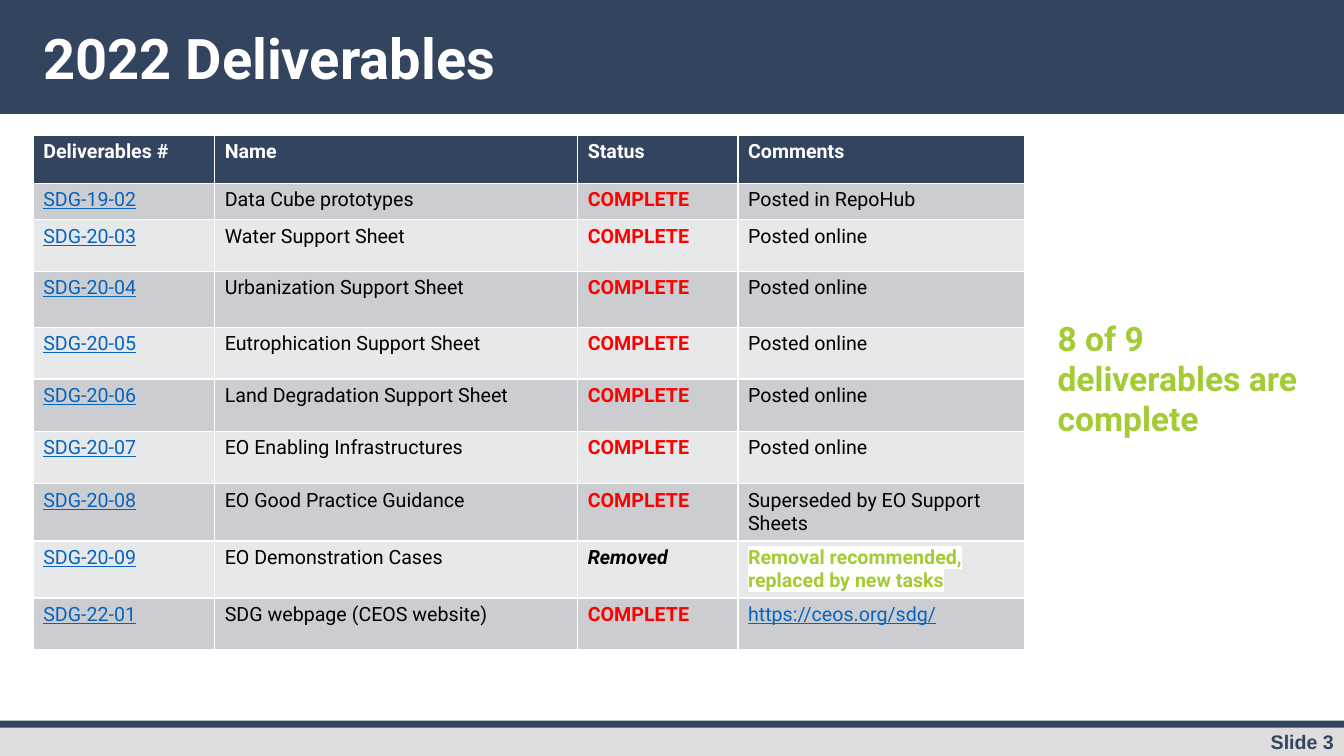
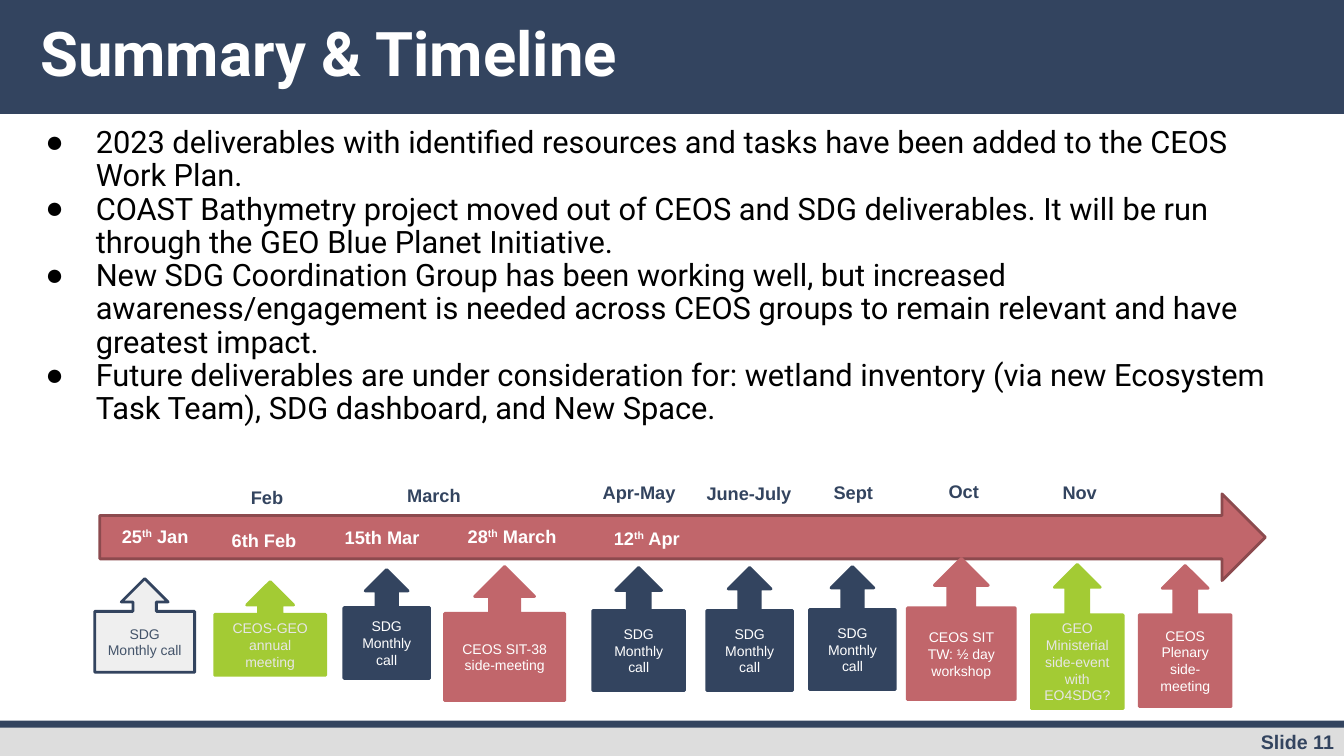
from typing import NamedTuple

from lxml.etree import SubElement
from pptx import Presentation
from pptx.dml.color import RGBColor
from pptx.enum.shapes import MSO_SHAPE as Preset
from pptx.enum.text import MSO_ANCHOR as Anchor
from pptx.enum.text import MSO_AUTO_SIZE as AutoSize
from pptx.enum.text import PP_ALIGN as Align
from pptx.oxml import parse_xml
from pptx.oxml.ns import nsdecls, qn
from pptx.util import Inches, Pt

# Shared palette and text formats
NAVY, ROSE, LIME = "33445F", "C1666B", "A3CB34"
WHITE, BLACK, RED, LINK = "FFFFFF", "000000", "FF0000", "0563C1"
PALE, SLATE, MIST, FOOTER_GRAY = "E7E6E6", "44546A", "EFEFEF", "DDDDDD"
ROW_FILLS = ("CCCDD1", "E7E8E9")

CELL = {"name": "Roboto", "size": Pt(14), "bold": False}
BOLD_CELL = CELL | {"bold": True}
BULLET = {"name": "Roboto", "size": Pt(22)}
CALLOUT = {"name": "Arial", "size": Pt(10)}
LABEL = {"name": "Arial", "size": Pt(13), "bold": True}
FOOTER = LABEL | {"size": Pt(14)}
REMARK = {"name": "Roboto", "size": Pt(24), "bold": True}


class Box(NamedTuple):
    left: float
    top: float
    width: float
    height: float

    def lengths(self) -> list:
        return [Inches(value) for value in self]


class Band(NamedTuple):
    box: Box
    color: str


class Deliverable(NamedTuple):
    number: str
    name: str
    height: float
    comment: str = "Posted online"
    status: str = "COMPLETE"


class Event(NamedTuple):
    text: str
    box: Box
    fill: str
    ink: str = WHITE
    edge: str = ""


class Label(NamedTuple):
    wording: tuple  # text, then optional superscript and remainder
    box: Box
    color: str


BANDS = (
    Band(Box(0, 0, 13.33, 1.13), NAVY),
    Band(Box(0, 7.19, 13.33, 0.31), FOOTER_GRAY),
    Band(Box(0, 7.15, 13.33, 0.07), NAVY),
)

COLUMNS = {"Deliverables #": 1.8, "Name": 3.6, "Status": 1.59, "Comments": 2.84}
DELIVERABLES = (
    Deliverable("SDG-19-02", "Data Cube prototypes", 0.36, "Posted in RepoHub"),
    Deliverable("SDG-20-03", "Water Support Sheet", 0.51),
    Deliverable("SDG-20-04", "Urbanization Support Sheet", 0.56),
    Deliverable("SDG-20-05", "Eutrophication Support Sheet", 0.51),
    Deliverable("SDG-20-06", "Land Degradation Support Sheet", 0.52),
    Deliverable("SDG-20-07", "EO Enabling Infrastructures", 0.52),
    Deliverable("SDG-20-08", "EO Good Practice Guidance", 0.51,
                "Superseded by EO Support Sheets"),
    Deliverable("SDG-20-09", "EO Demonstration Cases", 0.51,
                "Removal recommended, replaced by new tasks", "Removed"),
    Deliverable("SDG-22-01", "SDG webpage (CEOS website)", 0.51, "https://ceos.org/sdg/"),
)

SUMMARY = (
    "2023 deliverables with identified resources and tasks have been added to the "
    "CEOS Work Plan.",
    "COAST Bathymetry project moved out of CEOS and SDG deliverables. It will be run "
    "through the GEO Blue Planet Initiative.",
    "New SDG Coordination Group has been working well, but increased "
    "awareness/engagement is needed across CEOS groups to remain relevant and have "
    "greatest impact.",
    "Future deliverables are under consideration for: wetland inventory (via new "
    "Ecosystem Task Team), SDG dashboard, and New Space.",
)

MONTHLY = "SDG Monthly call"
EVENTS = (
    Event(MONTHLY, Box(0.94, 5.74, 0.99, 0.93), MIST, SLATE, NAVY),
    Event("CEOS-GEO annual meeting", Box(2.13, 5.77, 1.1, 0.93), LIME, PALE),
    Event(MONTHLY, Box(3.41, 5.65, 0.85, 1.08), NAVY),
    Event("CEOS SIT-38 side-meeting", Box(4.41, 5.62, 1.19, 1.33), ROSE),
    Event(MONTHLY, Box(5.88, 5.63, 0.91, 1.22), NAVY),
    Event(MONTHLY, Box(7.01, 5.63, 0.85, 1.22), NAVY),
    Event(MONTHLY, Box(8.03, 5.62, 0.85, 1.22), NAVY),
    Event("CEOS SIT TW: ½ day workshop", Box(9, 5.54, 1.07, 1.4), ROSE),
    Event("GEO Ministerial side-event with EO4SDG?", Box(10.23, 5.6, 0.91, 1.43), LIME, PALE),
    Event("CEOS Plenary\nside-meeting", Box(11.3, 5.61, 0.91, 1.4), ROSE),
)

LABELS = (
    # Months above the arrow
    Label(("Feb",), Box(2.39, 4.78, 1.22, 0.32), NAVY),
    Label(("March",), Box(3.94, 4.76, 1, 0.32), NAVY),
    Label(("Apr-May",), Box(5.88, 4.73, 1, 0.32), NAVY),
    Label(("June-July",), Box(6.91, 4.74, 1.07, 0.32), NAVY),
    Label(("Sept",), Box(8.17, 4.73, 1, 0.32), NAVY),
    Label(("Oct",), Box(9.31, 4.72, 1, 0.32), NAVY),
    Label(("Nov",), Box(10.44, 4.73, 1, 0.32), NAVY),
    # Dates on the arrow
    Label(("25", "th", " Jan"), Box(1.11, 5.16, 1.22, 0.32), WHITE),
    Label(("6th Feb",), Box(2.2, 5.2, 1.12, 0.32), WHITE),
    Label(("15th Mar",), Box(3.32, 5.17, 1.12, 0.32), WHITE),
    Label(("28", "th", " March"), Box(4.54, 5.16, 1.19, 0.32), WHITE),
    Label(("12", "th", " Apr"), Box(5.99, 5.18, 1.56, 0.32), WHITE),
)


def rgb(color: str) -> RGBColor:
    return RGBColor.from_string(color)


def format_font(font, color: str, values: dict) -> None:
    for attribute, value in values.items():
        setattr(font, attribute, value)
    font.color.rgb = rgb(color)


def place(shape, box: Box) -> None:
    for side, length in zip(("left", "top", "width", "height"), box.lengths()):
        setattr(shape, side, length)


def add_preset(slide, preset, box: Box, fill: str, edge: str = ""):
    shape = slide.shapes.add_shape(preset, *box.lengths())
    shape.shadow.inherit = False
    shape.fill.solid()
    shape.fill.fore_color.rgb = rgb(fill)
    if edge:
        shape.line.color.rgb = rgb(edge)
        shape.line.width = Pt(2)
    else:
        shape.line.fill.background()
    return shape


def add_text(slide, wording: tuple, box: Box, color: str, values: dict, align=Align.LEFT) -> None:
    frame = slide.shapes.add_textbox(*box.lengths()).text_frame
    frame.word_wrap = True
    line = frame.paragraphs[0]
    line.alignment = align
    for index, words in enumerate(wording):
        run = line.add_run()
        run.text = words
        format_font(run.font, color, values)
        if index == 1:  # ordinal suffix
            run.font._element.set("baseline", "30000")


def move_bands_to_master(slide, master) -> None:
    tree = master.shapes._spTree
    for index, band in enumerate(BANDS):
        element = add_preset(slide, Preset.RECTANGLE, band.box, band.color)._element
        element.nvSpPr.cNvPr.set("id", str(100 + index))
        tree.insert(2 + index, element)


def add_page(deck, layout: int, title: str, box: Box, size: int, number: int):
    """Add a slide with its heading and slide number."""
    slide = deck.slides.add_slide(deck.slide_layouts[layout])
    heading = slide.shapes.title
    place(heading, box)
    frame = heading.text_frame
    frame.text = title
    frame.auto_size, frame.vertical_anchor = AutoSize.NONE, Anchor.TOP
    line = frame.paragraphs[0]
    line.alignment, line.line_spacing = Align.LEFT, 0.9
    format_font(line.runs[0].font, WHITE, REMARK | {"size": Pt(size)})
    add_text(slide, (f"Slide {number}",), Box(11.23, 7.19, 2.1, 0.34), NAVY, FOOTER, Align.RIGHT)
    return slide


def fill_cell(cell, text: str, fill: str, color: str, values: dict):
    cell.fill.solid()
    cell.fill.fore_color.rgb = rgb(fill)
    run = cell.text_frame.paragraphs[0].add_run()
    run.text = text
    format_font(run.font, color, values)
    return run


def highlight(run, color: str) -> None:
    mark = f'<a:highlight {nsdecls("a")}><a:srgbClr val="{color}"/></a:highlight>'
    run.font._element.find(qn("a:solidFill")).addnext(parse_xml(mark))


def add_deliverables(slide) -> None:
    heights = [0.48] + [item.height for item in DELIVERABLES]
    box = Box(0.33, 1.34, sum(COLUMNS.values()), sum(heights))
    table = slide.shapes.add_table(len(heights), len(COLUMNS), *box.lengths()).table
    for row, height in zip(table.rows, heights):
        row.height = Inches(height)
    for index, (heading, width) in enumerate(COLUMNS.items()):
        table.columns[index].width = Inches(width)
        fill_cell(table.cell(0, index), heading, NAVY, WHITE, BOLD_CELL)

    linked = CELL | {"underline": True}
    for index, item in enumerate(DELIVERABLES):
        fill = ROW_FILLS[index % 2]
        number, name, status, comment = table.rows[index + 1].cells
        removed = item.status == "Removed"
        fill_cell(number, item.number, fill, LINK, linked)
        fill_cell(name, item.name, fill, BLACK, CELL)
        fill_cell(status, item.status, fill, BLACK if removed else RED,
                  BOLD_CELL | {"italic": removed})
        if removed:
            highlight(fill_cell(comment, item.comment, fill, LIME, BOLD_CELL), WHITE)
        elif item.comment.startswith("https"):
            fill_cell(comment, item.comment, fill, LINK, linked)
        else:
            fill_cell(comment, item.comment, fill, BLACK, CELL)


def add_summary(slide) -> None:
    body = slide.placeholders[1]
    place(body, Box(0.16, 1.21, 12.84, 3.17))
    frame = body.text_frame
    frame.text = "\n".join(SUMMARY)
    frame.auto_size, frame.vertical_anchor = AutoSize.NONE, Anchor.TOP
    for point in frame.paragraphs:
        point.line_spacing, point.space_before = 0.9, Pt(0)
        properties = point._p.get_or_add_pPr()
        properties.set("marL", str(Inches(0.69)))
        properties.set("indent", str(Inches(-0.5)))
        tint = SubElement(properties, qn("a:buClr"))
        SubElement(tint, qn("a:srgbClr"), val=BLACK)
        SubElement(properties, qn("a:buChar"), char="●")
        format_font(point.runs[0].font, BLACK, BULLET)


def add_event(slide, event: Event) -> None:
    callout = add_preset(slide, Preset.UP_ARROW_CALLOUT, event.box, event.fill,
                         event.edge or event.fill)
    for index, ratio in enumerate((0.25, 0.25, 0.25, 0.65)):
        callout.adjustments[index] = ratio
    frame = callout.text_frame
    frame.text = event.text
    frame.word_wrap, frame.vertical_anchor = True, Anchor.MIDDLE
    for line in frame.paragraphs:
        line.alignment = Align.CENTER
        format_font(line.runs[0].font, event.ink, CALLOUT)


def add_timeline(slide) -> None:
    add_preset(slide, Preset.RIGHT_ARROW, Box(0.99, 4.9, 11.56, 0.86), ROSE, "8C4A4E")
    for event in EVENTS:
        add_event(slide, event)
    for label in LABELS:
        add_text(slide, label.wording, label.box, label.color, LABEL)


def main() -> None:
    deck = Presentation()
    deck.slide_width, deck.slide_height = Inches(13.33), Inches(7.5)

    # Deliverables table
    status_page = add_page(deck, 5, "2022 Deliverables", Box(0.33, 0.26, 9.74, 0.73), 40, 3)
    move_bands_to_master(status_page, deck.slide_master)
    add_deliverables(status_page)
    add_text(status_page, ("8 of 9 deliverables are complete",),
             Box(10.39, 3.1, 2.61, 1.72), LIME, REMARK)

    # Summary and timeline
    summary_page = add_page(deck, 1, "Summary & Timeline", Box(0.3, 0.18, 10.47, 0.95), 44, 11)
    add_summary(summary_page)
    add_timeline(summary_page)

    deck.save("out.pptx")


if __name__ == "__main__":
    main()
